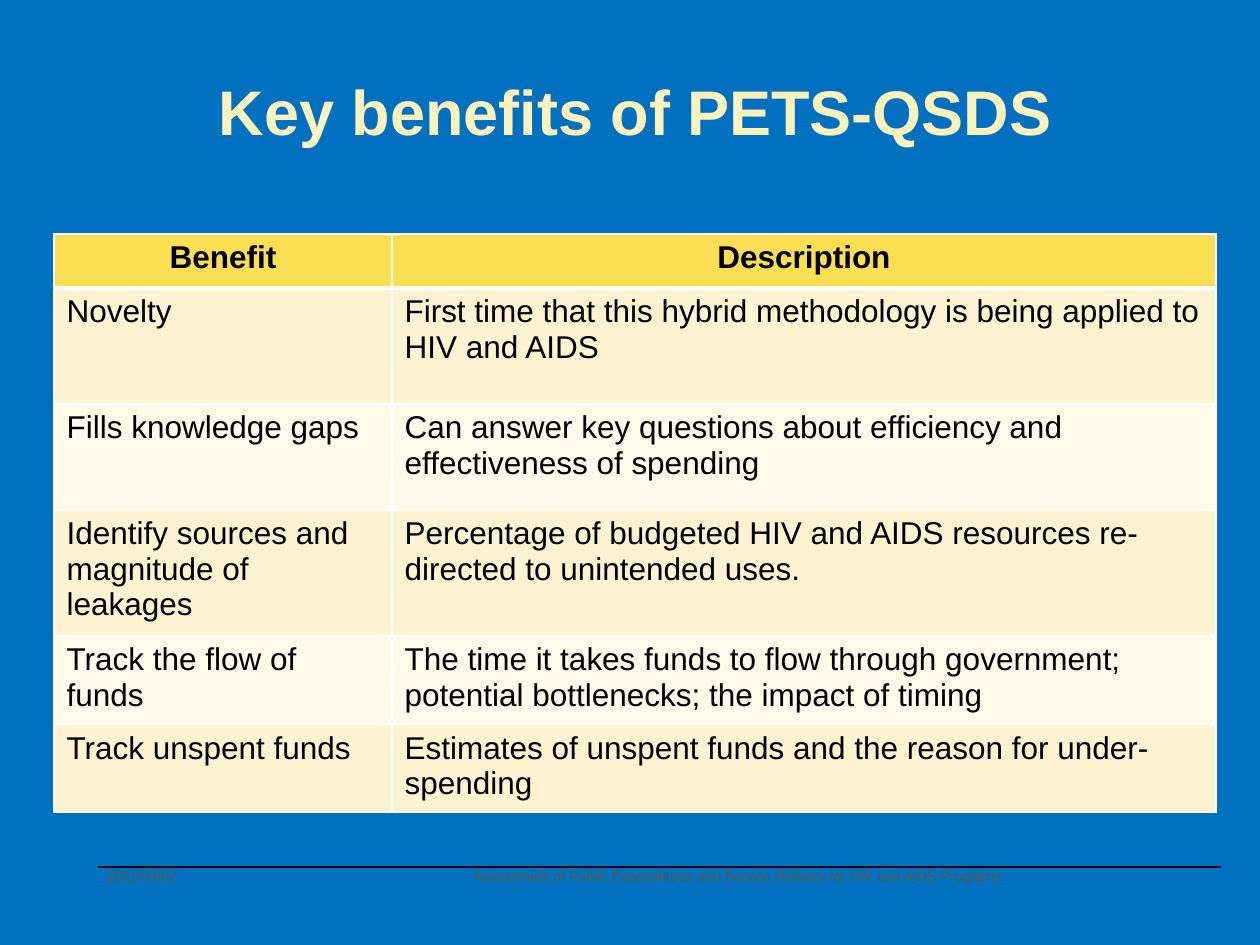
from lxml.etree import SubElement
from pptx import Presentation
from pptx.dml.color import RGBColor
from pptx.enum.shapes import MSO_CONNECTOR
from pptx.enum.text import MSO_ANCHOR, PP_ALIGN
from pptx.oxml.ns import qn
from pptx.util import Pt

PX = 914400 // 126
COLORS = {
    "background": "0070C0", "title": "FDF2BA", "footer": "595841", "text": "000000",
    "border": "FFFFFF", "header": "FBDF53", "odd": "FDF3D1", "even": "FEF9E9",
}
TITLE = "Key benefits of PETS-QSDS"
FOOTERS = [
    ("2011/03/02", (95, 861, 262, 63), PP_ALIGN.LEFT),
    ("Assessment of Public Expenditures and Service Delivery for HIV and AIDS Programs",
     (246, 861, 984, 63), PP_ALIGN.CENTER),
]
RULES = [(266, 1221), (98, 315)]
RULE_TOP = 867
BENEFITS = [
    ("Benefit", "Description"),
    ("Novelty", "First time that this hybrid methodology is being applied to HIV and AIDS"),
    ("Fills knowledge gaps",
     "Can answer key questions about efficiency and effectiveness of spending"),
    ("Identify sources and magnitude of leakages",
     "Percentage of budgeted HIV and AIDS resources re-directed to unintended uses."),
    ("Track the flow of funds",
     "The time it takes funds to flow through government; potential bottlenecks; "
     "the impact of timing"),
    ("Track unspent funds", "Estimates of unspent funds and the reason for under-spending"),
]
COLUMN_WIDTHS = [338, 824]
ROW_HEIGHTS = [54, 116, 106, 117, 84, 84]


def color(name):
    return RGBColor.from_string(COLORS[name])


def write(frame, text, size, color_name, align, bold=False):
    para = frame.paragraphs[0]
    para.text = text
    para.alignment = align
    para.font.name = "Arial"
    para.font.size = Pt(size)
    para.font.bold = bold
    para.font.color.rgb = color(color_name)


def add_text(page, place, text, size, color_name, align, bold=False, anchor=MSO_ANCHOR.TOP):
    box = page.shapes.add_textbox(*(value * PX for value in place))
    box.text_frame.word_wrap = True
    box.text_frame.vertical_anchor = anchor
    write(box.text_frame, text, size, color_name, align, bold)


def add_rule(page, start, end):
    rule = page.shapes.add_connector(
        MSO_CONNECTOR.STRAIGHT, start * PX, RULE_TOP * PX, end * PX, RULE_TOP * PX)
    rule.line.color.rgb = color("text")
    rule.line.width = Pt(0.75)
    SubElement(rule.element.spPr, qn("a:effectLst"))


def set_borders(cell, widths):
    properties = cell._tc.get_or_add_tcPr()
    for position, (side, width) in enumerate(widths.items()):
        line = SubElement(properties, qn(f"a:{side}"), w=str(Pt(width)))
        fill = SubElement(line, qn("a:solidFill"))
        SubElement(fill, qn("a:srgbClr"), val=COLORS["border"])
        properties.insert(position, line)


def add_benefits(page):
    table = page.shapes.add_table(
        len(BENEFITS), len(COLUMN_WIDTHS), 54 * PX, 234 * PX,
        sum(COLUMN_WIDTHS) * PX, sum(ROW_HEIGHTS) * PX).table
    for column, width in zip(table.columns, COLUMN_WIDTHS):
        column.width = width * PX
    for index, (texts, height) in enumerate(zip(BENEFITS, ROW_HEIGHTS)):
        table.rows[index].height = height * PX
        header = index == 0
        fill = "header" if header else "odd" if index % 2 else "even"
        align = PP_ALIGN.CENTER if header else PP_ALIGN.LEFT
        widths = {"lnL": 1, "lnR": 1, "lnT": 3 if index == 1 else 1, "lnB": 3 if header else 1}
        for cell, text in zip(table.rows[index].cells, texts):
            write(cell.text_frame, text, 18, "text", align, header)
            cell.fill.solid()
            cell.fill.fore_color.rgb = color(fill)
            set_borders(cell, widths)


def main():
    deck = Presentation()
    deck.slide_width, deck.slide_height = 1260 * PX, 945 * PX
    page = deck.slides.add_slide(deck.slide_layouts[6])
    page.background.fill.solid()
    page.background.fill.fore_color.rgb = color("background")
    for text, place, align in FOOTERS:
        add_text(page, place, text, 8, "footer", align)
    for start, end in RULES:
        add_rule(page, start, end)
    add_text(page, (42, 32, 1187, 157), TITLE, 36, "title", PP_ALIGN.CENTER, True,
             MSO_ANCHOR.MIDDLE)
    add_benefits(page)
    deck.save("out.pptx")


if __name__ == "__main__":
    main()
